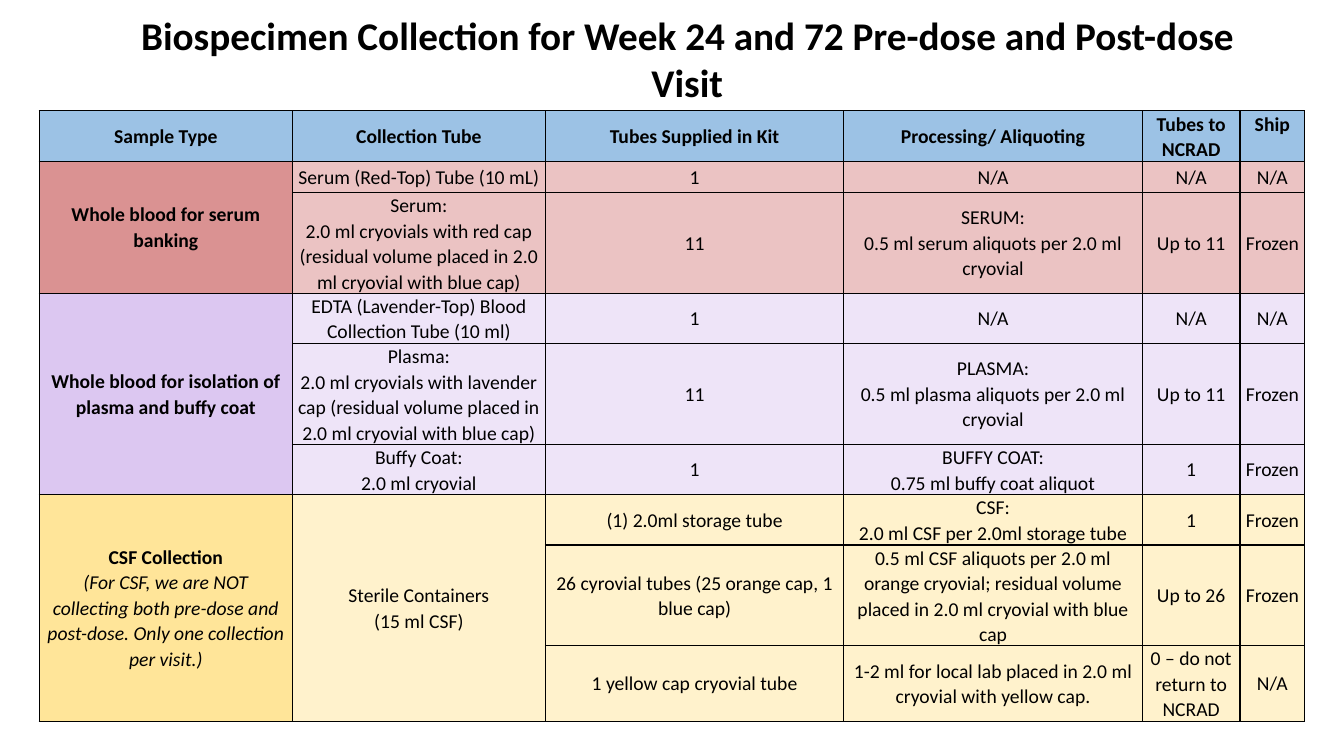
from lxml.etree import SubElement
from pptx import Presentation
from pptx.dml.color import RGBColor
from pptx.enum.text import MSO_ANCHOR, PP_ALIGN
from pptx.oxml.ns import qn
from pptx.util import Inches, Pt

FONT = "Calibri"
BLACK = "000000"
COLUMN_WIDTHS = [2.51, 2.51, 2.96, 2.96, 0.97, 0.64]
ROW_HEIGHTS = [0.43, 0.31, 0.72, 0.43, 0.72, 0.31, 0.43, 0.76, 0.72]

TITLE = "Biospecimen Collection for Week 24 and 72 Pre-dose and Post-dose Visit"

# Each band: fill of the sample type, fill of the other cells, rows.
# None continues the cell above.
BANDS = [
    ("9CC2E5", "9CC2E5", [
        ["Sample Type", "Collection Tube", "Tubes Supplied in Kit",
         "Processing/ Aliquoting", "Tubes to NCRAD", "Ship"],
    ]),
    ("DA9292", "EBC3C3", [
        ["Whole blood for serum banking", "Serum (Red-Top) Tube (10 mL)",
         "1", "N/A", "N/A", "N/A"],
        [None, "Serum:\n2.0 ml cryovials with red cap (residual volume "
         "placed in 2.0 ml cryovial with blue cap)", "11",
         "SERUM:\n0.5 ml serum aliquots per 2.0 ml cryovial",
         "Up to 11", "Frozen"],
    ]),
    ("DCC7F1", "EEE4F8", [
        ["Whole blood for isolation of plasma and buffy coat",
         "EDTA (Lavender-Top) Blood Collection Tube (10 ml)",
         "1", "N/A", "N/A", "N/A"],
        [None, "Plasma:\n2.0 ml cryovials with lavender cap (residual "
         "volume placed in 2.0 ml cryovial with blue cap)", "11",
         "PLASMA:\n0.5 ml plasma aliquots per 2.0 ml cryovial",
         "Up to 11", "Frozen"],
        [None, "Buffy Coat:\n2.0 ml cryovial", "1",
         "BUFFY COAT:\n0.75 ml buffy coat aliquot", "1", "Frozen"],
    ]),
    ("FFE599", "FFF2CC", [
        ["CSF Collection\n(For CSF, we are NOT collecting both pre-dose and "
         "post-dose. Only one collection per visit.)",
         "Sterile Containers\n(15 ml CSF)", "(1) 2.0ml storage tube",
         "CSF:\n2.0 ml CSF per 2.0ml storage tube", "1", "Frozen"],
        [None, None, "26 cyrovial tubes (25 orange cap, 1 blue cap)",
         "0.5 ml CSF aliquots per 2.0 ml orange cryovial; residual volume "
         "placed in 2.0 ml cryovial with blue cap", "Up to 26", "Frozen"],
        [None, None, "1 yellow cap cryovial tube",
         "1-2 ml for local lab placed in 2.0 ml cryovial with yellow cap.",
         "0 – do not return to NCRAD", "N/A"],
    ]),
]


def color(hex_value):
    return RGBColor.from_string(hex_value)


def format_paragraph(paragraph, size, bold=False, italic=False):
    paragraph.alignment = PP_ALIGN.CENTER
    for run in paragraph.runs:
        run.font.name = FONT
        run.font.size = Pt(size)
        run.font.bold = bold
        run.font.italic = italic
        run.font.color.rgb = color(BLACK)


def add_title(slide):
    title = slide.shapes.add_textbox(
        Inches(0.49), Inches(0.07), Inches(12.21), Inches(1.02))
    frame = title.text_frame
    frame.word_wrap = True
    frame.vertical_anchor = MSO_ANCHOR.MIDDLE
    frame.margin_left = Inches(0.54)
    frame.text = TITLE
    format_paragraph(frame.paragraphs[0], 28, bold=True)


def style_cell(cell, fill):
    """Set the margins, black borders and fill of a cell."""
    cell.margin_left = cell.margin_right = Inches(0.05)
    cell.margin_top = cell.margin_bottom = 0
    cell.vertical_anchor = MSO_ANCHOR.MIDDLE
    properties = cell._tc.get_or_add_tcPr()
    for side in ("a:lnL", "a:lnR", "a:lnT", "a:lnB"):
        border = SubElement(properties, qn(side), w=str(Pt(1)))
        border_fill = SubElement(border, qn("a:solidFill"))
        SubElement(border_fill, qn("a:srgbClr"), val=BLACK)
    cell.fill.solid()
    cell.fill.fore_color.rgb = color(fill)


def write_cell(cell, text, bold):
    """Write centred text; a bold cell's second paragraph is an italic note."""
    cell.text_frame.text = text
    for index, paragraph in enumerate(cell.text_frame.paragraphs):
        is_note = bold and index > 0
        paragraph.line_spacing = 1.07
        format_paragraph(paragraph, 14, bold and not is_note, is_note)


def add_band(table, top, type_fill, body_fill, rows):
    is_header = top == 0
    for r, row in enumerate(rows):
        for c, text in enumerate(row):
            cell = table.cell(top + r, c)
            style_cell(cell, body_fill if c else type_fill)
            if text is not None:
                write_cell(cell, text, bold=is_header or c == 0)
    for c, column in enumerate(zip(*rows)):
        if None in column:
            table.cell(top, c).merge(table.cell(top + len(rows) - 1, c))


def add_collection_table(slide):
    table = slide.shapes.add_table(
        len(ROW_HEIGHTS), len(COLUMN_WIDTHS), Inches(0.39), Inches(1.1),
        Inches(sum(COLUMN_WIDTHS)), Inches(sum(ROW_HEIGHTS))).table
    table.first_row = table.horz_banding = False
    for column, width in zip(table.columns, COLUMN_WIDTHS):
        column.width = Inches(width)
    for row, height in zip(table.rows, ROW_HEIGHTS):
        row.height = Inches(height)
    top = 0
    for type_fill, body_fill, rows in BANDS:
        add_band(table, top, type_fill, body_fill, rows)
        top += len(rows)
    ship_header = table.cell(0, len(COLUMN_WIDTHS) - 1)
    ship_header.vertical_anchor = MSO_ANCHOR.TOP


def main():
    presentation = Presentation()
    presentation.slide_width = Inches(13.33)
    presentation.slide_height = Inches(7.5)
    slide = presentation.slides.add_slide(presentation.slide_layouts[6])
    add_title(slide)
    add_collection_table(slide)
    presentation.save("out.pptx")


if __name__ == "__main__":
    main()
